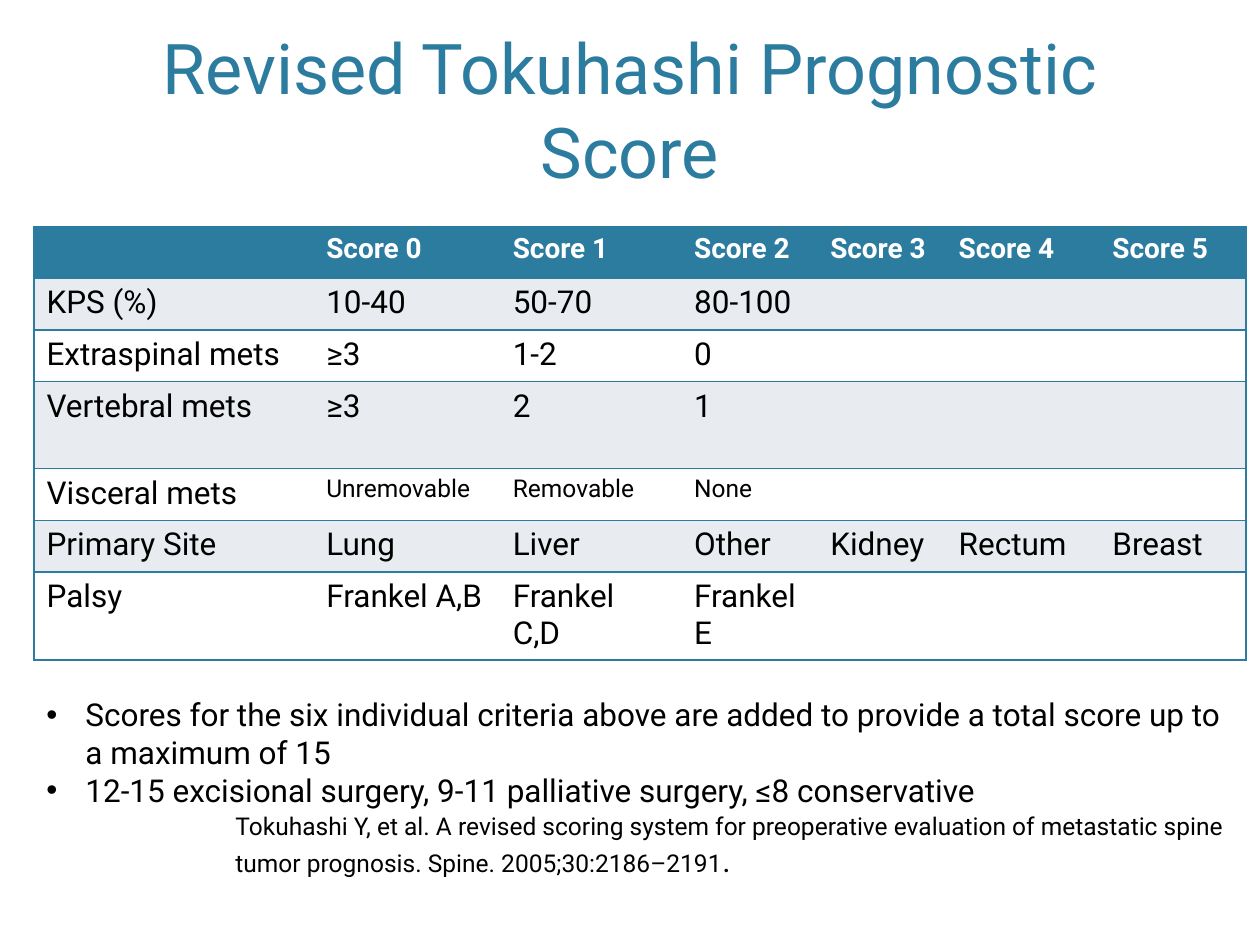
from dataclasses import dataclass
from lxml.etree import SubElement
from pptx import Presentation
from pptx.dml.color import RGBColor as Rgb
from pptx.enum.text import MSO_ANCHOR as Anchor, PP_ALIGN as Align
from pptx.oxml.ns import qn
from pptx.util import Inches, Pt


@dataclass(frozen=True)
class Theme:
    font: str = "Roboto"
    blue: str = "2C7C9F"
    band: str = "E8ECF0"
    white: str = "FFFFFF"
    black: str = "000000"
    title: int = 40
    body: int = 18
    head: int = 16
    small: int = 14


THEME = Theme()
COLS = [2.22, 1.48, 1.44, 1.08, 1.02, 1.22, 1.16]
TALL = {"Vertebral mets", "Palsy"}
SCORES = [
    ["", *[f"Score {n}" for n in range(6)]],
    ["KPS (%)", "10-40", "50-70", "80-100"],
    ["Extraspinal mets", "≥3", "1-2", "0"],
    ["Vertebral mets", "≥3", "2", "1"],
    ["Visceral mets", "Unremovable", "Removable", "None"],
    ["Primary Site", "Lung", "Liver", "Other", "Kidney", "Rectum", "Breast"],
    ["Palsy", "Frankel A,B", "Frankel C,D", "Frankel E"],
]
POINTS = [
    "Scores for the six individual criteria above are added to provide "
    "a total score up to a maximum of 15",
    "12-15 excisional surgery, 9-11 palliative surgery, ≤8 conservative",
]
SOURCE = (
    "Tokuhashi Y, et al. A revised scoring system for preoperative evaluation "
    "of metastatic spine tumor prognosis. Spine. 2005;30:2186–2191"
)


def set_font(font, size, color, bold=False):
    font.name, font.size, font.bold = THEME.font, Pt(size), bold
    font.color.rgb = Rgb.from_string(color)


def add_frame(slide, box):
    frame = slide.shapes.add_textbox(*map(Inches, box)).text_frame
    frame.word_wrap = True
    return frame


def add_title(slide, box, text):
    frame = add_frame(slide, box)
    frame.vertical_anchor = Anchor.BOTTOM
    para = frame.paragraphs[0]
    para.text, para.alignment = text, Align.CENTER
    set_font(para.font, THEME.title, THEME.blue)


def set_edges(cell, first, last):
    props = cell._tc.get_or_add_tcPr()
    for tag, shown in (("lnL", first), ("lnR", last), ("lnT", True), ("lnB", True)):
        line = SubElement(props, qn(f"a:{tag}"), w=str(Pt(1)))
        if shown:
            fill = SubElement(line, qn("a:solidFill"))
            SubElement(fill, qn("a:srgbClr"), val=THEME.blue)
        else:
            SubElement(line, qn("a:noFill"))


def add_scores(slide, box, rows):
    table = slide.shapes.add_table(len(rows), len(COLS), *map(Inches, box)).table
    for col, width in zip(table.columns, COLS):
        col.width = Inches(width)
    for r, row in enumerate(rows):
        table.rows[r].height = Inches(0.69 if row[0] in TALL else 0.41)
        head = r == 0
        back = THEME.blue if head else THEME.band if r % 2 else THEME.white
        for c in range(len(COLS)):
            cell = table.cell(r, c)
            set_edges(cell, c == 0, c == len(COLS) - 1)
            cell.fill.solid()
            cell.fill.fore_color.rgb = Rgb.from_string(back)
            para = cell.text_frame.paragraphs[0]
            if c < len(row):
                para.text = row[c]
            small = row[0] == "Visceral mets" and 0 < c < len(row)
            size = THEME.head if head else THEME.small if small else THEME.body
            set_font(para.font, size, THEME.white if head else THEME.black, head)


def add_points(slide, box, points):
    frame = add_frame(slide, box)
    for n, text in enumerate(points):
        para = frame.add_paragraph() if n else frame.paragraphs[0]
        para.text = text
        props = para._p.get_or_add_pPr()
        props.set("marL", str(Inches(0.31)))
        props.set("indent", str(-Inches(0.31)))
        SubElement(props, qn("a:buFont"), typeface="Arial")
        SubElement(props, qn("a:buChar"), char="•")
        set_font(para.font, THEME.body, THEME.black)


def add_source(slide, box, text):
    para = add_frame(slide, box).paragraphs[0]
    for part, size in ((text, THEME.small), (".", THEME.body)):
        run = para.add_run()
        run.text = part
        set_font(run.font, size, THEME.black)


def main():
    deck = Presentation()
    deck.slide_width, deck.slide_height = Inches(10), Inches(7.5)
    slide = deck.slides.add_slide(deck.slide_layouts[6])
    add_title(slide, (0.6, 0.12, 8.8, 1.46), "Revised Tokuhashi Prognostic Score")
    add_scores(slide, (0.27, 1.8, 9.63, 3.43), SCORES)
    add_points(slide, (0.27, 5.47, 9.63, 1.01), POINTS)
    add_source(slide, (1.77, 6.39, 8.12, 0.64), SOURCE)
    deck.save("out.pptx")


if __name__ == "__main__":
    main()
